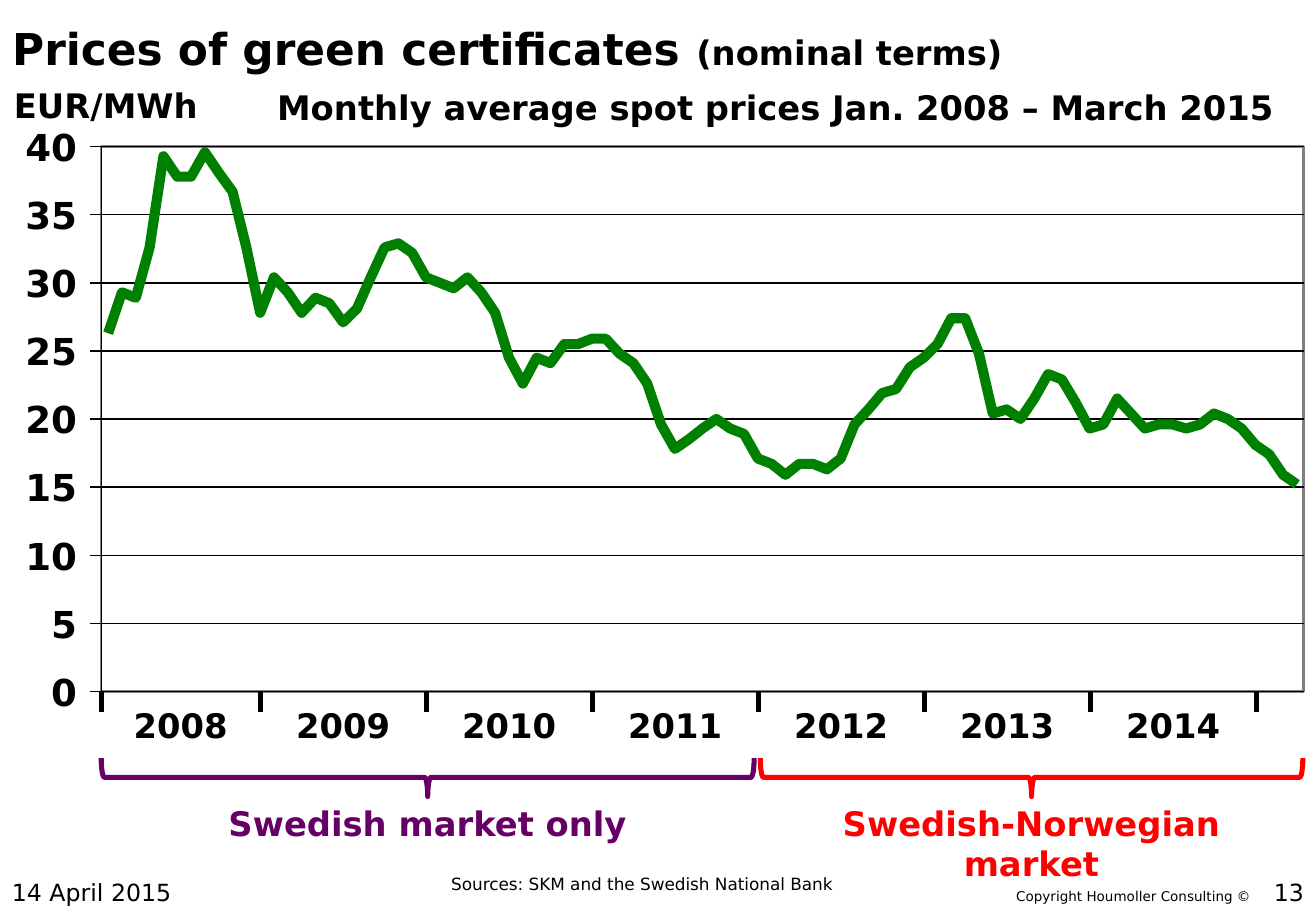
from lxml.etree import SubElement
from pptx import Presentation
from pptx.dml.color import RGBColor
from pptx.enum.shapes import MSO_CONNECTOR, MSO_SHAPE
from pptx.enum.text import MSO_ANCHOR, PP_ALIGN
from pptx.oxml.ns import qn
from pptx.util import Pt

PX = 7620  # 120 px to the inch
FONT = "DejaVu Sans"
BLACK = RGBColor(0x00, 0x00, 0x00)
GREY = RGBColor(0x80, 0x80, 0x80)
GREEN = RGBColor(0x00, 0x80, 0x00)
RED = RGBColor(0xFF, 0x00, 0x00)
PURPLE = RGBColor(0x66, 0x00, 0x66)

PAGE = (0, 0, 1300, 900)
PLOT = (100, 145, 1188, 538)
TOP_PRICE, PRICE_STEP = 40, 5

# Monthly prices in EUR/MWh
PRICES = {
    2008: [26.3, 29.3, 28.9, 32.6, 39.3, 37.8, 37.8, 39.6, 38.1, 36.7, 32.6, 27.8],
    2009: [30.4, 29.3, 27.8, 28.9, 28.5, 27.1, 28.1, 30.4, 32.6, 32.9, 32.2, 30.4],
    2010: [30.0, 29.6, 30.4, 29.3, 27.8, 24.5, 22.6, 24.5, 24.1, 25.5, 25.5, 25.9],
    2011: [25.9, 24.8, 24.1, 22.6, 19.6, 17.8, 18.5, 19.3, 20.0, 19.3, 18.9, 17.1],
    2012: [16.7, 15.9, 16.7, 16.7, 16.3, 17.1, 19.6, 20.7, 21.9, 22.2, 23.8, 24.5],
    2013: [25.5, 27.4, 27.4, 24.8, 20.4, 20.7, 20.0, 21.5, 23.3, 22.9, 21.2, 19.3],
    2014: [19.6, 21.5, 20.4, 19.3, 19.6, 19.6, 19.3, 19.6, 20.4, 20.0, 19.3, 18.1],
    2015: [17.4, 15.9, 15.2],
}


def emu(*lengths):
    return [round(length * PX) for length in lengths]


def set_font(font, size, color=BLACK, bold=False):
    font.name = FONT
    font.size = Pt(size)
    font.bold = bold
    font.color.rgb = color


def add_text(page, box, lines, size, color=BLACK, bold=False,
             align=PP_ALIGN.LEFT, anchor=MSO_ANCHOR.TOP):
    frame = page.shapes.add_textbox(*emu(*box)).text_frame
    frame.word_wrap = True
    frame.vertical_anchor = anchor
    frame.text = "\n".join(lines)
    for para in frame.paragraphs:
        para.alignment = align
        set_font(para.font, size, color, bold)
    return frame


def add_line(page, start, end, weight):
    line = page.shapes.add_connector(MSO_CONNECTOR.STRAIGHT, *emu(*start, *end))
    line.line.color.rgb = BLACK
    line.line.width = Pt(weight)
    SubElement(line.element.spPr, qn("a:effectLst"))


def outline(shape, color, weight):
    shape.shadow.inherit = False
    shape.fill.background()
    shape.line.color.rgb = color
    shape.line.width = Pt(weight)


def add_heading(page, box):
    left, top, width, height = box
    title = page.shapes.title
    title.left, title.top, title.width, title.height = emu(left, top, 1105, 95)
    frame = title.text_frame
    frame.vertical_anchor = MSO_ANCHOR.MIDDLE
    para = frame.paragraphs[0]
    para.alignment = PP_ALIGN.LEFT
    for text, size in (("Prices of green certificates ", 26), ("(nominal terms)", 20)):
        span = para.add_run()
        span.text = text
        set_font(span.font, size, bold=True)
    add_text(page, (left + 2, top + 78, 230, 53), ["EUR/MWh"], 20, bold=True)
    add_text(page, (left + 262, top + 80, 1032, 53),
             ["Monthly average spot prices Jan. 2008 – March 2015"], 20, bold=True)


def add_price_scale(page, plot_box):
    left, top, width, height = plot_box
    outline(page.shapes.add_shape(MSO_SHAPE.RECTANGLE, *emu(*plot_box)), GREY, 1.5)
    add_line(page, (left, top), (left, top + height), 0.75)
    for price in range(0, TOP_PRICE + 1, PRICE_STEP):
        level = top + height * (1 - price / TOP_PRICE)
        add_line(page, (left - 11, level), (left + width, level), 0.75)
        label = add_text(page, (left - 90, level - 22, 66, 44), [str(price)], 22,
                         bold=True, align=PP_ALIGN.RIGHT, anchor=MSO_ANCHOR.MIDDLE)
        label.margin_left = label.margin_right = label.margin_top = label.margin_bottom = 0


def add_year_scale(page, plot_box):
    left, top, width, height = plot_box
    base = top + height
    ticks = [max(left, left - 7 + 164 * index) for index in range(len(PRICES))]
    for tick in ticks:
        add_line(page, (tick, base), (tick, base + 20), 3)
    for year, start, end in zip(PRICES, ticks, ticks[1:]):
        add_text(page, ((start + end) / 2 - 60, base + 7, 120, 53), [str(year)], 20,
                 bold=True, align=PP_ALIGN.CENTER)


def add_price_curve(page, plot_box):
    left, top, width, height = plot_box
    prices = [price for year in PRICES.values() for price in year]
    month_width = width / len(prices)
    points = [emu(left + (month + 0.5) * month_width, top + height * (1 - price / TOP_PRICE))
              for month, price in enumerate(prices)]
    builder = page.shapes.build_freeform(*points[0])
    builder.add_line_segments(points[1:], close=False)
    outline(builder.convert_to_shape(), GREEN, 6)


def add_market(page, box, lines, label_left, label_width, color):
    left, top, width, height = box
    # The brace is turned a quarter, so its own width and height are swapped
    brace = page.shapes.add_shape(MSO_SHAPE.RIGHT_BRACE, *emu(
        left + (width - height) / 2, top + (height - width) / 2, height, width))
    brace.rotation = 90
    brace.adjustments[0] = 0.083
    outline(brace, color, 3)
    add_text(page, (label_left, top + height, label_width, 13 + 40 * len(lines)), lines,
             20, color, bold=True, align=PP_ALIGN.CENTER)


def add_footer(page, box):
    left, top, width, height = box
    bottom = top + height
    add_text(page, (left + 434, bottom - 43, 420, 32),
             ["Sources: SKM and the Swedish National Bank"], 10)
    add_text(page, (left + 992, bottom - 29, 268, 29), ["Copyright Houmoller Consulting ©"], 8)
    add_text(page, (left, bottom - 49, 271, 60), ["14 April 2015"], 14, anchor=MSO_ANCHOR.MIDDLE)
    add_text(page, (left + width - 271, bottom - 49, 271, 60), ["13"], 14,
             align=PP_ALIGN.RIGHT, anchor=MSO_ANCHOR.MIDDLE)


def main():
    deck = Presentation()
    deck.slide_width, deck.slide_height = emu(*PAGE[2:])
    page = deck.slides.add_slide(deck.slide_layouts[5])  # title only
    add_heading(page, PAGE)
    add_price_scale(page, PLOT)
    add_year_scale(page, PLOT)
    add_price_curve(page, PLOT)
    add_market(page, (100, 749, 645, 38), ["Swedish market only"], 174, 497, PURPLE)
    add_market(page, (751, 749, 536, 38), ["Swedish-Norwegian", "market"], 799, 440, RED)
    add_footer(page, PAGE)
    deck.save("out.pptx")


if __name__ == "__main__":
    main()
